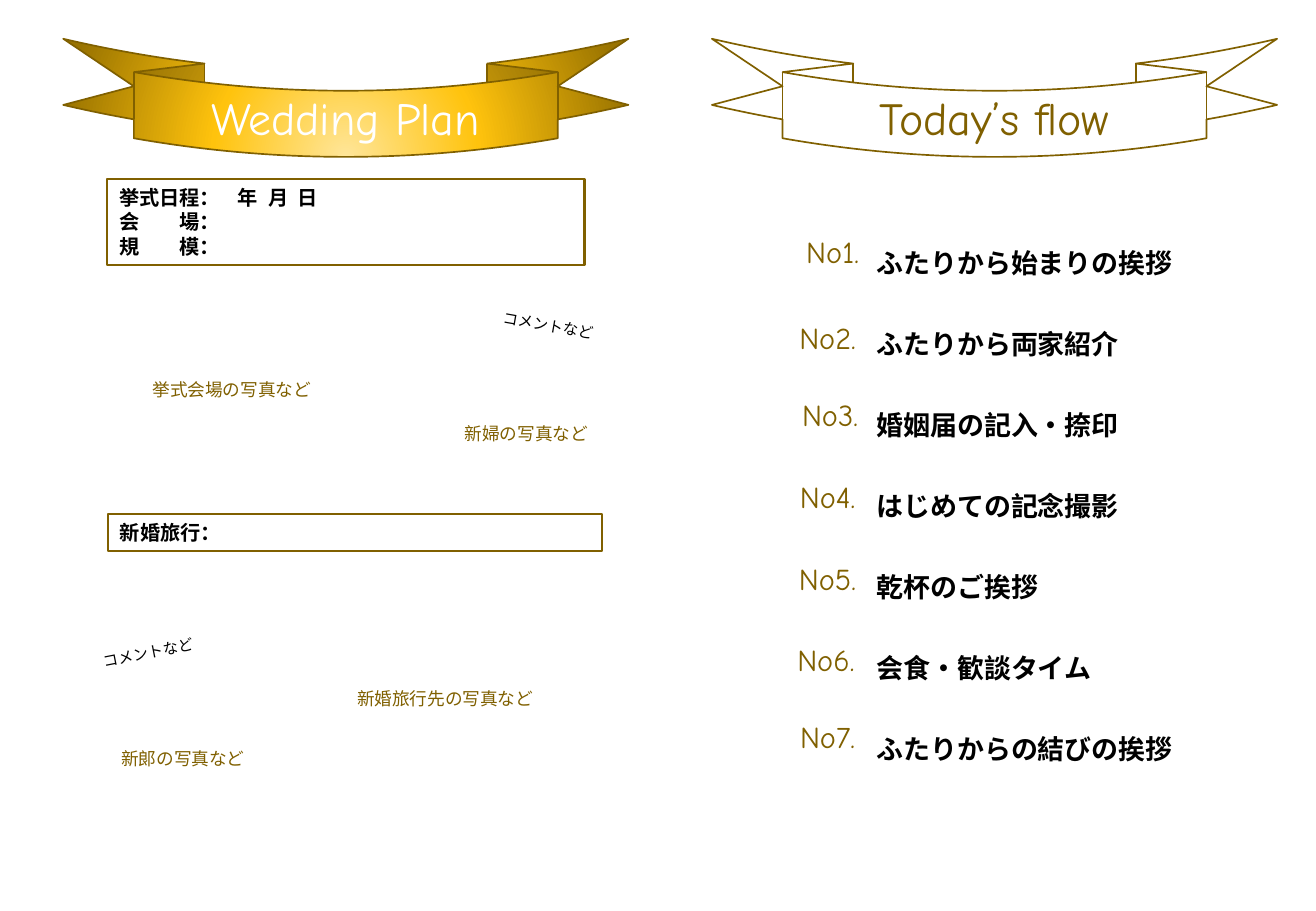
from lxml import etree
from pptx import Presentation
from pptx.dml.color import RGBColor
from pptx.enum.shapes import MSO_SHAPE
from pptx.enum.text import MSO_ANCHOR, MSO_AUTO_SIZE, PP_ALIGN
from pptx.oxml import parse_xml
from pptx.oxml.ns import nsdecls, qn
from pptx.util import Pt

RIBBON, RECT = MSO_SHAPE.CURVED_DOWN_RIBBON, MSO_SHAPE.RECTANGLE
TOP, MIDDLE = MSO_ANCHOR.TOP, MSO_ANCHOR.MIDDLE
LEFT, CENTER = PP_ALIGN.LEFT, PP_ALIGN.CENTER
NO_FIT = MSO_AUTO_SIZE.NONE
LATIN, KANJI = "Comic Neue", "Noto Sans CJK JP"
COLORS = {"gold": "806000", "white": "FFFFFF", "black": "000000"}
GLOW = [(0, "FFE699"), (46, "FFC30D"), (100, "997300")]

# Content: places are (left, top, width, height) in points
PLAN, FLOW = "Wedding Plan", "Today’s flow"
FLOW_STEPS = [
    "ふたりから始まりの挨拶",
    "ふたりから両家紹介",
    "婚姻届の記入・捺印",
    "はじめての記念撮影",
    "乾杯のご挨拶",
    "会食・歓談タイム",
    "ふたりからの結びの挨拶",
]
NUMBER_SPOTS = [(454.5, 134.5), (451.5, 185.5), (453, 231), (451.5, 280),
                (451.5, 328.5), (450.5, 376.5), (451.5, 422)]
FRAMES = [
    ((63.5, 106, 283, 51), ["挙式日程：\t年\t月\t日", "会\t場：", "規\t模："]),
    ((64, 304.5, 293, 22), ["新婚旅行："]),
]
FRAME_TABS = [36, 70.5, 88.5, 106]
COMMENTS = [((268, 183.5, 108.5, 51), 10), ((38, 377.5, 108.5, 62), 348.8)]
PHOTOS = [
    ("挙式会場の写真など", 101.5, 195),
    ("新婦の写真など", 276, 221),
    ("新婚旅行先の写真など", 228, 378),
    ("新郎の写真など", 72.5, 413.5),
]
STEP_BOX = (512.5, 114, 207.5, 358.5)
BANNER_TOP, BANNER_W, BANNER_H = 23, 335, 70
HEAD_TOP, HEAD_W, HEAD_H = 57.5, 192, 32
KANJI_LINE = 1.21

deck = Presentation()
deck.slide_width, deck.slide_height = Pt(780), Pt(540)
slide = deck.slides.add_slide(deck.slide_layouts[5])
shapes = slide.shapes


def tint(name):
    return RGBColor.from_string(COLORS[name])


def write(shape, lines, size, color="gold", font=LATIN, bold=False,
          align=CENTER, anchor=MIDDLE, space=0.9, wrap=True):
    frame = shape.text_frame
    frame.word_wrap, frame.vertical_anchor = wrap, anchor
    frame.auto_size = NO_FIT
    for i, line in enumerate(lines):
        para = frame.add_paragraph() if i else frame.paragraphs[0]
        para.alignment, para.line_spacing = align, space
        run = para.add_run()
        run.text = line
        run.font.name, run.font.size, run.font.bold = font, Pt(size), bold
        run.font.color.rgb = tint(color)
        east = etree.SubElement(run._r.get_or_add_rPr(), qn("a:ea"))
        east.set("typeface", KANJI)


def add_box(place):
    return shapes.add_textbox(*map(Pt, place))


def add_outline(kind, place, width):
    shape = shapes.add_shape(kind, *map(Pt, place))
    shape.shadow.inherit = False
    shape.line.color.rgb = tint("gold")
    shape.line.width = Pt(width)
    shape.fill.background()
    return shape


def add_banner(left):
    banner = add_outline(RIBBON, (left, BANNER_TOP, BANNER_W, BANNER_H), 1)
    for i, value in enumerate((0.44, 0.75, 0.28)):
        banner.adjustments[i] = value
    return banner


def add_glow(shape):
    """Fill the shape with a round gradient centred below its middle."""
    stops = "".join(f'<a:gs pos="{at * 1000}"><a:srgbClr val="{color}"/></a:gs>'
                    for at, color in GLOW)
    fill = parse_xml(
        f'<a:gradFill {nsdecls("a")}><a:gsLst>{stops}</a:gsLst>'
        '<a:path path="circle"><a:fillToRect l="50000" t="130000" '
        'r="50000" b="-30000"/></a:path></a:gradFill>')
    props = shape.element.spPr
    props.replace(props.find(qn("a:noFill")), fill)


def head_place(left):
    return left + (BANNER_W - HEAD_W) / 2, HEAD_TOP, HEAD_W, HEAD_H


def add_tabs(para):
    tabs = etree.SubElement(para._p.get_or_add_pPr(), qn("a:tabLst"))
    for stop in FRAME_TABS:
        tab = etree.SubElement(tabs, qn("a:tab"))
        tab.set("pos", str(Pt(stop)))
        tab.set("algn", "l")


# Today's flow
flow_left, plan_left = 422, 37.5
add_banner(flow_left)
write(add_box(head_place(flow_left)), [FLOW], 27.2, space=0.7)
write(add_box(STEP_BOX), FLOW_STEPS, 16, "black", KANJI, True, LEFT, TOP, Pt(48))
for i, (left, top) in enumerate(NUMBER_SPOTS, 1):
    write(add_box((left, top, 78, 31.5)), [f"No{i}."], 18)

# Wedding plan
banner = add_banner(plan_left)
add_glow(banner)
title = shapes.title
title.left, title.top, title.width, title.height = map(Pt, head_place(plan_left))
write(title, [PLAN], 27.2, "white", space=0.7)
banner.element.addnext(title.element)

for place, lines in FRAMES:
    box = add_outline(RECT, place, 1.25)
    box.fill.solid()
    box.fill.fore_color.rgb = tint("white")
    write(box, lines, 12, "black", KANJI, True, LEFT, TOP, Pt(12 * KANJI_LINE))
    for para in box.text_frame.paragraphs:
        add_tabs(para)

for place, angle in COMMENTS:
    note = add_box(place)
    note.rotation = angle
    write(note, ["コメントなど"], 9, "black", KANJI, anchor=TOP,
          space=Pt(9 * KANJI_LINE))

for label, left, top in PHOTOS:
    write(add_box((left, top, 72, 72)), [label], 10.5,
          space=Pt(10.5 * KANJI_LINE), wrap=False)

deck.save("out.pptx")
